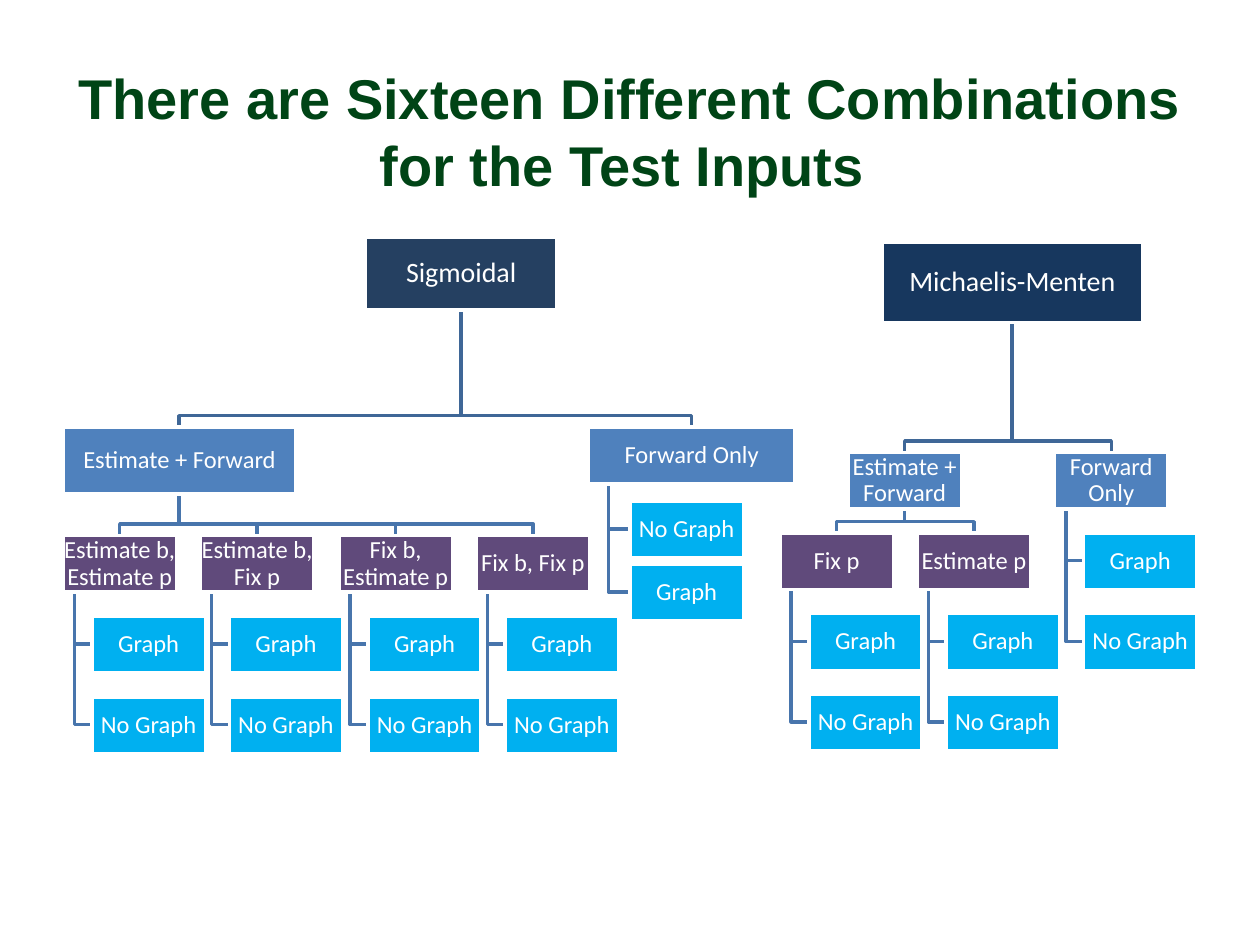
"""Build the slide that shows the sixteen test input combinations as two trees."""
from pptx import Presentation
from pptx import util as u
from pptx.dml.color import RGBColor
from pptx.enum import shapes, text

PX = 9144
COLORS = {"title": "004416", "sigmoidal": "254061", "menten": "17375E",
          "mode": "4F81BD", "parameters": "604A7B", "output": "00B0F0",
          "upper_line": "3F6797", "lower_line": "4875AC", "white": "FFFFFF"}


def write(shape, words, size, color, font="Calibri", bold=False, inset=0,
          anchor=text.MSO_ANCHOR.MIDDLE, spacing=0.9):
    frame = shape.text_frame
    frame.text = words
    frame.word_wrap = True
    frame.auto_size = text.MSO_AUTO_SIZE.NONE
    frame.vertical_anchor = anchor
    frame.margin_left = frame.margin_right = inset * PX
    frame.margin_top = frame.margin_bottom = inset * PX
    paragraph = frame.paragraphs[0]
    paragraph.alignment = text.PP_ALIGN.CENTER
    paragraph.line_spacing = spacing
    run = paragraph.runs[0].font
    run.name, run.size, run.bold = font, u.Pt(size), bold
    run.color.rgb = RGBColor.from_string(COLORS[color])


def draw_line(points, color):
    builder = slide.shapes.build_freeform(*points[0], scale=PX)
    builder.add_line_segments(points[1:], close=False)
    branch = builder.convert_to_shape()
    branch.shadow.inherit = False
    branch.fill.background()
    branch.line.width = u.Pt(2)
    branch.line.color.rgb = RGBColor.from_string(COLORS[color])


prs = Presentation()
prs.slide_width, prs.slide_height = 1000 * PX, 750 * PX
slide = prs.slides.add_slide(prs.slide_layouts[5])

title = slide.shapes.title
title.left, title.top, title.width, title.height = 50 * PX, 17 * PX, 900 * PX, 150 * PX
write(title, "There are Sixteen Different Combinations for the Test Inputs ", 32, "title",
      font="Arial", bold=True, inset=10, anchor=text.MSO_ANCHOR.BOTTOM, spacing=1.0)

sigmoidal = ("Sigmoidal", "sigmoidal", 290, 188, 152, 58)
menten = ("Michaelis-Menten", "menten", 700, 192, 207, 64)
sigmoidal_estimate = ("Estimate + Forward", "mode", 50, 339, 185, 53)
sigmoidal_forward = ("Forward Only", "mode", 467, 339, 164, 45)
menten_estimate = ("Estimate + Forward", "mode", 673, 359, 90, 45)
menten_forward = ("Forward Only", "mode", 837, 359, 90, 45)

sigmoidal_choices = ["Estimate b, Estimate p", "Estimate b, Fix p",
                     "Fix b, Estimate p", "Fix b, Fix p"]
sigmoidal_parameters = [(label, "parameters", round(50 + 109.3 * i), 425, 90, 45)
                        for i, label in enumerate(sigmoidal_choices)]
menten_parameters = [(label, "parameters", 619 + 109 * i, 423, 90, 45)
                     for i, label in enumerate(["Fix p", "Estimate p"])]

branches = [(sigmoidal, [sigmoidal_estimate, sigmoidal_forward]),
            (menten, [menten_estimate, menten_forward]),
            (sigmoidal_estimate, sigmoidal_parameters),
            (menten_estimate, menten_parameters)]

outputs = [(sigmoidal_forward, [("No Graph", "output", 500, 398, 90, 45),
                                ("Graph", "output", 500, 448, 90, 45)])]
for host in [*sigmoidal_parameters, *menten_parameters, menten_forward]:
    left, top = host[2:4]
    outputs.append((host, [(label, "output", left + 23, top + 64 * row, 90, 45)
                           for row, label in enumerate(["Graph", "No Graph"], 1)]))

for parent, children in branches:
    left, top, width, height = parent[2:]
    middle, bottom = left + width // 2, top + height
    color = "lower_line" if parent[1] == "mode" else "upper_line"
    for child in children:
        child_middle, child_top = child[2] + child[4] // 2, child[3]
        draw_line([(middle, bottom), (middle, child_top - 9),
                   (child_middle, child_top - 9), (child_middle, child_top)], color)

for parent, children in outputs:
    left, top, width, height = parent[2:]
    stem = left + width // 10
    for child in children:
        child_center = child[3] + child[5] // 2
        draw_line([(stem, top + height), (stem, child_center), (child[2], child_center)],
                  "lower_line")

nodes = [sigmoidal, menten]
for parent, children in branches + outputs:
    nodes.extend(children)

for label, level, left, top, width, height in nodes:
    node = slide.shapes.add_shape(shapes.MSO_SHAPE.RECTANGLE,
                                  left * PX, top * PX, width * PX, height * PX)
    node.shadow.inherit = False
    node.fill.solid()
    node.fill.fore_color.rgb = RGBColor.from_string(COLORS[level])
    node.line.width = u.Pt(2)
    node.line.color.rgb = RGBColor.from_string(COLORS["white"])
    write(node, label, 16 if level in ("sigmoidal", "menten") else 14, "white")

prs.save("out.pptx")
